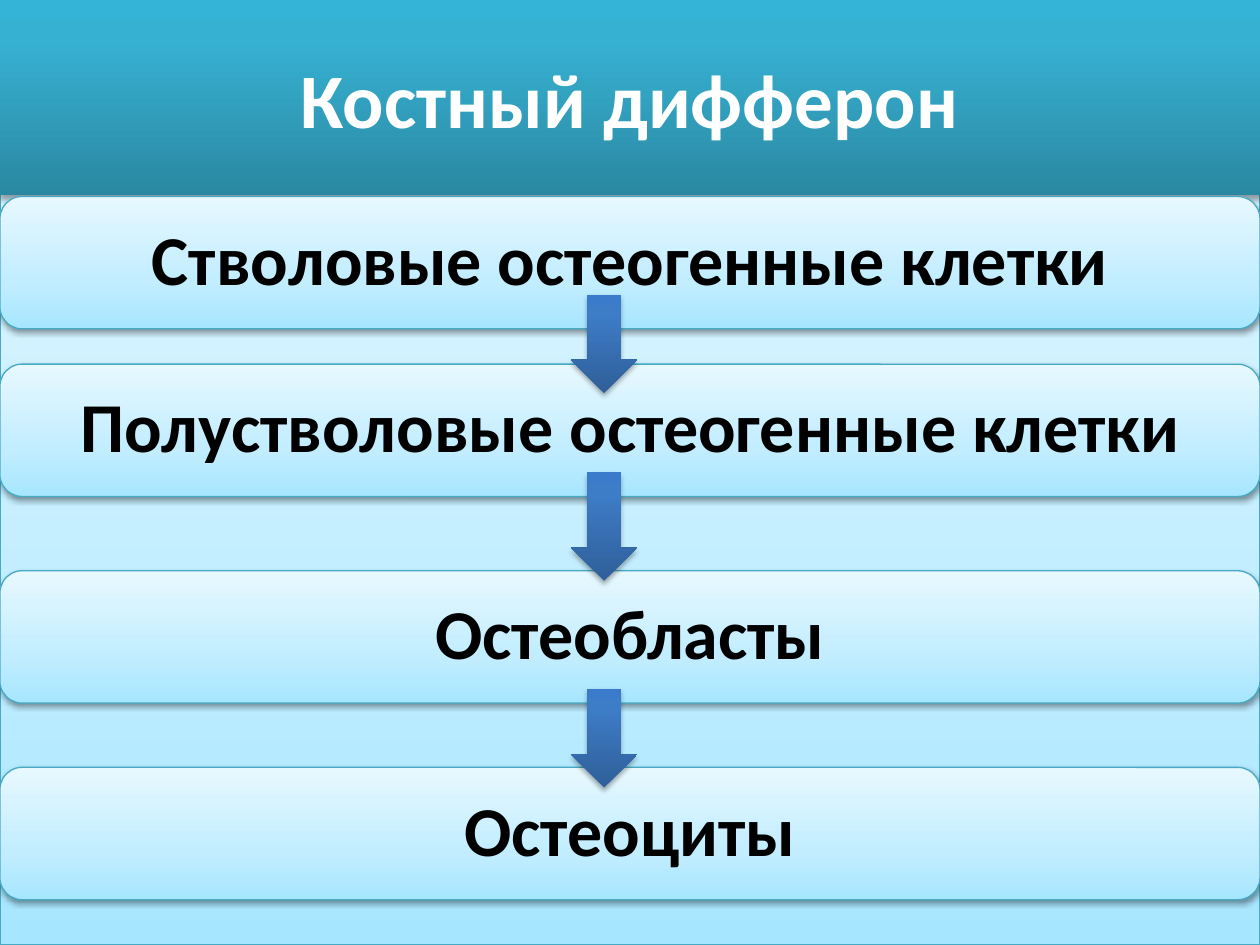
from lxml import etree
from pptx import Presentation
from pptx.dml.color import RGBColor
from pptx.enum.shapes import MSO_SHAPE
from pptx.enum.text import MSO_ANCHOR, PP_ALIGN
from pptx.oxml.ns import qn
from pptx.util import Inches, Pt

RECT = MSO_SHAPE.RECTANGLE
ROUND = MSO_SHAPE.ROUNDED_RECTANGLE
ARROW = MSO_SHAPE.DOWN_ARROW
MIDDLE = MSO_ANCHOR.MIDDLE
CENTER = PP_ALIGN.CENTER

COLS, ROWS = 100, 75
CELL = Inches(0.1)
FONT = "Calibri"
EDGE = "46AAC5"

# Gradient stops run from bottom to top
PALE = [(0, "A7E6FF"), (35, "C1EDFF"), (100, "E7F8FF")]
TEAL = [(0, "2A88A2"), (80, "37B1D2"), (100, "34B4D6")]
BLUE = [(0, "2F5F99"), (80, "3D7CC7"), (100, "3A7CCB")]

# Shadow opacity in percent and distance in points
SOFT, DEEP = (38, 1.6), (35, 1.8)

# Row and height of each card, with its label
CARD_H = 10.5
CARDS = [
    (15.6, "Стволовые остеогенные клетки"),
    (28.9, "Полустволовые остеогенные клетки"),
    (45.3, "Остеобласты"),
    (60.9, "Остеоциты"),
]
ARROWS = [(23.4, 7.8), (37.5, 8.6), (54.7, 7.8)]


def color(code):
    return RGBColor.from_string(code)


def add_tint(node, code, alpha=None):
    """Append an RGB colour, with opacity in percent, to an XML node."""
    tint = etree.SubElement(node, qn("a:srgbClr"), val=code)
    if alpha is not None:
        etree.SubElement(tint, qn("a:alpha"), val=str(alpha * 1000))


def set_fade(shape, stops):
    shape.fill.gradient()
    shape.fill.gradient_angle = 90
    group = shape._element.spPr.find(".//" + qn("a:gsLst"))
    for old in list(group):
        group.remove(old)
    for pos, code in stops:
        add_tint(etree.SubElement(group, qn("a:gs"), pos=str(pos * 1000)), code)


def set_shade(shape, alpha, dist):
    shape.shadow.inherit = False
    effects = shape._element.spPr.find(qn("a:effectLst"))
    shade = etree.SubElement(
        effects, qn("a:outerShdw"), blurRad=str(Pt(3.1)), dist=str(Pt(dist)),
        dir="5400000", rotWithShape="0")
    add_tint(shade, "000000", alpha)


def add_block(slide, kind, box, stops, shade, edge=None):
    """Add a shape at box = (column, row, columns, rows)."""
    shape = slide.shapes.add_shape(kind, *(round(n * CELL) for n in box))
    set_fade(shape, stops)
    set_shade(shape, *shade)
    if edge:
        shape.line.color.rgb = color(edge)
        shape.line.width = Pt(0.75)
    else:
        shape.line.fill.background()
    return shape


def add_label(shape, text, size, code):
    frame = shape.text_frame
    frame.word_wrap = True
    frame.vertical_anchor = MIDDLE
    para = frame.paragraphs[0]
    para.alignment = CENTER
    run = para.add_run()
    run.text = text
    font = run.font
    font.name, font.size, font.bold = FONT, Pt(size), True
    font.color.rgb = color(code)
    return frame


def add_title(slide, box, text):
    add_label(add_block(slide, RECT, box, TEAL, DEEP), text, 44, "FFFFFF")


def add_card(slide, box, text):
    card = add_block(slide, ROUND, box, PALE, SOFT, EDGE)
    frame = add_label(card, text, 40, "000000")
    frame.margin_left = frame.margin_right = Inches(0.17)
    frame.margin_top = frame.margin_bottom = Inches(0.17)
    frame.paragraphs[0].line_spacing = 0.9


def add_flow(slide, box):
    """Stack the cards across the box and lay the arrows over their gaps."""
    left, top, width, _ = box
    for row, text in CARDS:
        add_card(slide, (left, top + row, width, CARD_H), text)
    for row, height in ARROWS:
        spot = (left + 0.453 * width, top + row, 0.053 * width, height)
        add_block(slide, ARROW, spot, BLUE, DEEP)


def main():
    deck = Presentation()
    deck.slide_width, deck.slide_height = COLS * CELL, ROWS * CELL
    slide = deck.slides.add_slide(deck.slide_layouts[6])
    page = (0, 0, COLS, ROWS)
    add_block(slide, RECT, page, PALE, SOFT, EDGE)
    add_title(slide, (0, 0, COLS, 15.5), "Костный дифферон")
    add_flow(slide, page)
    deck.save("out.pptx")


if __name__ == "__main__":
    main()
